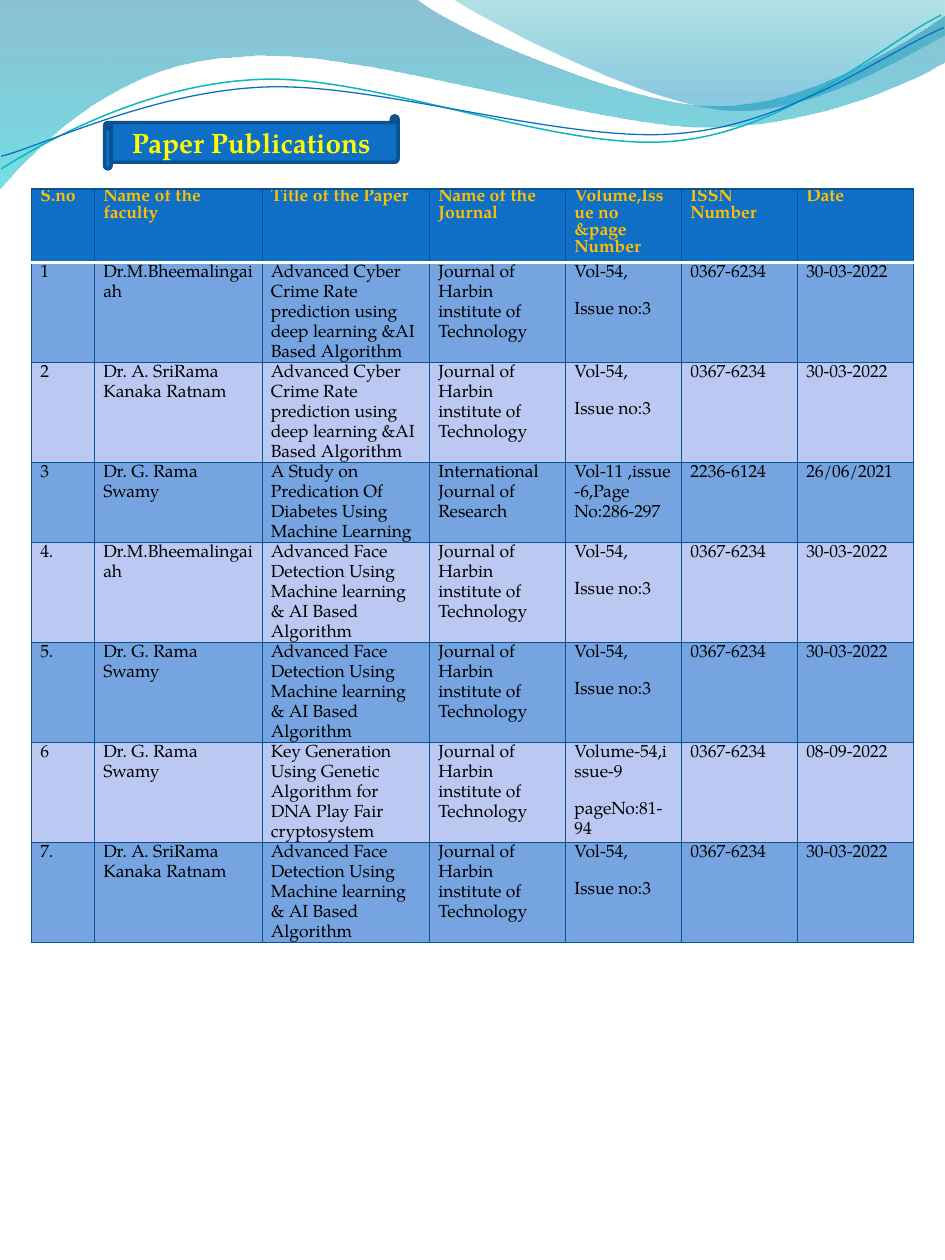
from dataclasses import dataclass

import pptx
import pptx.dml.color
import pptx.enum.shapes
import pptx.enum.text
import pptx.oxml
import pptx.oxml.ns
import pptx.util
from pptx.util import Inches

NS = pptx.oxml.ns.nsdecls("a")
qn = pptx.oxml.ns.qn


@dataclass(frozen=True)
class Theme:
    font: str = "TeX Gyre Pagella"
    title_size: float = 16
    table_size: float = 10
    blue: str = "0F6FC6"
    navy: str = "0B5292"
    teal: str = "0AB8BF"
    grid: str = "095295"
    white: str = "FFFFFF"
    black: str = "000000"
    yellow: str = "FFFF00"
    gold: str = "FFC000"
    bands: tuple = ("76A4E0", "BAC8F2")


T = Theme()

# Each step is a line end (x, y) or a curve (two control points and an end).
WAVE_LEFT = [(0, -0.01), (3.3, -0.01), (3.57, 0.22, 4.98, 0.84, 5.69, 0.84),
             (6.4, 0.84, 7.19, 0.34, 7.5, 0.12), (7.51, 0.48),
             (7.38, 0.58, 6.52, 1.01, 5.59, 1.01),
             (4.66, 1, 2.86, 0.37, 1.93, 0.45),
             (0.97, 0.47, 0.34, 1.11, -0.01, 1.51)]
WAVE_RIGHT = [(3.59, -0.01), (3.82, 0.15, 5.11, 0.82, 5.77, 0.87),
              (6.42, 0.92, 7.21, 0.43, 7.5, 0.28), (7.5, 0)]
TEAL_CURVE = [(0.01, 1.34), (0.36, 1.12, 1.18, 0.66, 2.07, 0.63),
              (2.96, 0.59, 4.45, 1.21, 5.35, 1.12),
              (6.26, 1.04, 7.03, 0.33, 7.47, 0.12)]
BLUE_CURVE = [(0.01, 1.24), (0.36, 1.15, 1.22, 0.72, 2.12, 0.69),
              (3.02, 0.66, 4.49, 1.14, 5.38, 1.06),
              (6.28, 0.99, 7.05, 0.4, 7.49, 0.22)]

COLUMNS = [0.5, 1.33, 1.33, 1.08, 0.92, 0.92, 0.92]
HEADER = ["S.no", "Name of the faculty", "Title of the Paper",
          "Name of the Journal", "Volume,Issue no &page Number",
          "ISSN Number", "Date"]
BHEEM, RATNAM, SWAMY = ("Dr.M.Bheemalingaiah", "Dr. A. SriRama Kanaka Ratnam",
                        "Dr. G. Rama Swamy")
CRIME = ("Advanced Cyber Crime Rate prediction using deep learning "
         "&AI Based Algorithm")
FACE = "Advanced Face Detection Using Machine learning & AI Based Algorithm"
HARBIN = "Journal of Harbin institute of Technology"
ISSN = "0367-6234"
ISSUE_3 = [HARBIN, "Vol-54,\nIssue no:3", ISSN, "30-03-2022"]
ROWS = [
    ["1", BHEEM, CRIME, *ISSUE_3],
    ["2", RATNAM, CRIME, *ISSUE_3],
    ["3", SWAMY, "A Study on Predication Of Diabetes Using Machine Learning",
     "International Journal of Research", "Vol-11 ,issue-6,Page No:286-297",
     "2236-6124", "26/06/2021"],
    ["4.", BHEEM, FACE, *ISSUE_3],
    ["5.", SWAMY, FACE, *ISSUE_3],
    ["6", SWAMY,
     "Key Generation Using Genetic Algorithm for DNA Play Fair cryptosystem",
     HARBIN, "Volume-54,issue-9\npageNo:81-94", ISSN, "08-09-2022"],
    ["7.", RATNAM, FACE, *ISSUE_3],
]


def rgb(value):
    return pptx.dml.color.RGBColor.from_string(value)


def set_attrs(obj, values):
    for name, value in values.items():
        setattr(obj, name, value)


def format_font(font, size, color, bold):
    set_attrs(font, {"name": T.font, "size": pptx.util.Pt(size), "bold": bold})
    font.color.rgb = rgb(color)


def add_curve(s, steps, closed):
    """Build a freeform through every point, then bend the curved steps."""
    points = [(Inches(x), Inches(y)) for step in steps
              for x, y in zip(step[::2], step[1::2])]
    builder = s.shapes.build_freeform(*points[0], scale=1.0)
    builder.add_line_segments(points[1:], close=closed)
    sp = builder.convert_to_shape()
    sp.shadow.inherit = False
    outline = next(sp._element.iter(qn("a:path")))
    ends = iter(outline.findall(qn("a:lnTo")))
    for step in steps[1:]:
        group = [next(ends) for _ in range(len(step) // 2)]
        if len(group) == 3:
            bezier = pptx.oxml.parse_xml(f"<a:cubicBezTo {NS}/>")
            group[0].addprevious(bezier)
            for end in group:
                bezier.append(end[0])
                outline.remove(end)
    return sp


def add_wave(s, steps, stops):
    """Stops are (position, colour, opacity), all but the colour in percent."""
    sp = add_curve(s, steps, True)
    sp.line.fill.background()
    marks = "".join(
        f'<a:gs pos="{pos * 1000}"><a:srgbClr val="{color}">'
        f'<a:alpha val="{alpha * 1000}"/></a:srgbClr></a:gs>'
        for pos, color, alpha in stops)
    sp._element.spPr.find(qn("a:custGeom")).addnext(pptx.oxml.parse_xml(
        f'<a:gradFill {NS} rotWithShape="1"><a:gsLst>{marks}</a:gsLst>'
        '<a:lin ang="5400000" scaled="0"/></a:gradFill>'))


def add_ribbon_line(s, steps, color, width):
    sp = add_curve(s, steps, False)
    sp.fill.background()
    sp.line.color.rgb = rgb(color)
    sp.line.width = pptx.util.Pt(width)


def add_title(s, text):
    box = [Inches(v) for v in (0.83, 0.92, 2.33, 0.42)]
    sp = s.shapes.add_shape(
        pptx.enum.shapes.MSO_SHAPE.HORIZONTAL_SCROLL, *box)
    sp.shadow.inherit = False
    sp.fill.solid()
    sp.fill.fore_color.rgb = rgb(T.blue)
    sp.line.color.rgb = rgb(T.navy)
    sp.line.width = pptx.util.Pt(2)

    title = s.shapes.title
    sp._element.addnext(title._element)
    set_attrs(title, dict(zip(("left", "top", "width", "height"), box)))
    tf = title.text_frame
    tf.text = text
    set_attrs(tf, {"word_wrap": True, "margin_top": 0, "margin_bottom": 0,
                   "auto_size": pptx.enum.text.MSO_AUTO_SIZE.NONE,
                   "vertical_anchor": pptx.enum.text.MSO_ANCHOR.MIDDLE})
    p = tf.paragraphs[0]
    p.alignment = pptx.enum.text.PP_ALIGN.CENTER
    format_font(p.runs[0].font, T.title_size, T.yellow, True)


def set_borders(cell, sides):
    """Sides maps L, R, T and B, in that order, to (colour, points)."""
    tc_pr = cell._tc.get_or_add_tcPr()
    for i, (side, (color, width)) in enumerate(sides.items()):
        tc_pr.insert(i, pptx.oxml.parse_xml(
            f'<a:ln{side} {NS} w="{int(width * 12700)}"><a:solidFill>'
            f'<a:srgbClr val="{color}"/></a:solidFill></a:ln{side}>'))


def fill_cell(cell, text, row):
    header = row == 0
    set_attrs(cell, {"margin_left": Inches(0.07), "margin_right": Inches(0.07),
                     "margin_top": 0, "margin_bottom": 0})
    cell.text_frame.text = text
    for p in cell.text_frame.paragraphs:
        p.space_after = pptx.util.Pt(10)
        if not header:
            p.line_spacing = 1.15
        format_font(p.runs[0].font, T.table_size,
                    T.gold if header else T.black, header)
    cell.fill.solid()
    cell.fill.fore_color.rgb = rgb(
        T.blue if header else T.bands[(row - 1) % 2])
    grid, rule = (T.grid, 0.75), (T.white, 2)
    set_borders(cell, {"L": grid, "R": grid, "T": rule if row == 1 else grid,
                       "B": rule if header else grid})


def add_publications(s):
    rows = [HEADER, *ROWS]
    row_height = Inches(0.58)
    table = s.shapes.add_table(
        len(rows), len(COLUMNS), Inches(0.25), Inches(1.5),
        Inches(sum(COLUMNS)), row_height * len(rows)).table
    for column, width in zip(table.columns, COLUMNS):
        column.width = Inches(width)
    for i, texts in enumerate(rows):
        table.rows[i].height = row_height
        for j, text in enumerate(texts):
            fill_cell(table.cell(i, j), text, i)


def main():
    prs = pptx.Presentation()
    set_attrs(prs, {"slide_width": Inches(7.5), "slide_height": Inches(10)})
    s = prs.slides.add_slide(prs.slide_layouts.get_by_name("Title Only"))
    add_wave(s, WAVE_LEFT, [(0, "0074A1", 45), (100, "00C6CF", 55)])
    add_wave(s, WAVE_RIGHT, [(0, "00A1A9", 30), (80, "008BBF", 45)])
    add_ribbon_line(s, TEAL_CURVE, T.teal, 0.85)
    add_ribbon_line(s, BLUE_CURVE, T.blue, 0.75)
    add_title(s, "Paper Publications")
    add_publications(s)
    prs.save("out.pptx")


if __name__ == "__main__":
    main()
